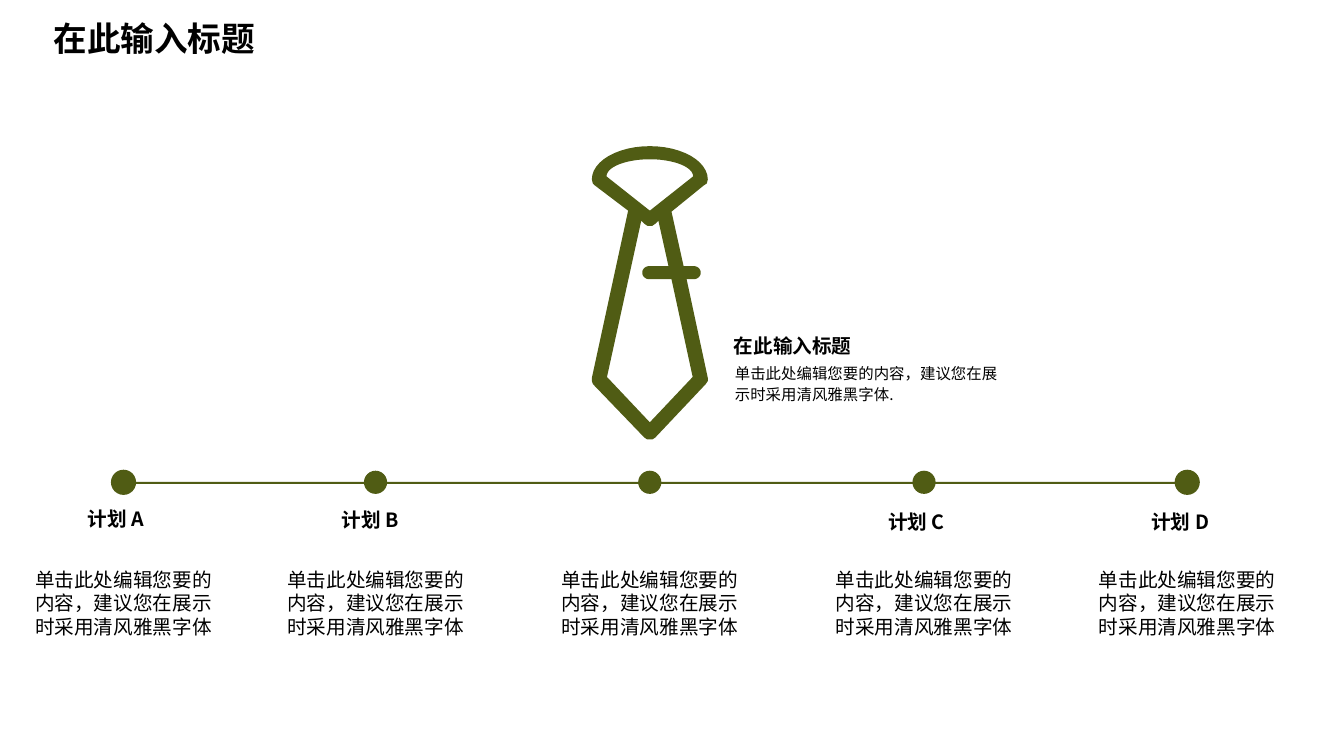
"""Build a timeline slide with a tie above five plan stops."""
from math import cos, pi, sin

from pptx import Presentation
from pptx.dml.color import RGBColor
from pptx.enum.shapes import MSO_SHAPE
from pptx.enum.text import MSO_ANCHOR, PP_ALIGN
from pptx.oxml.ns import qn
from pptx.util import Pt

PX = 9144
FONT = "Noto Sans CJK SC"
COLORS = {"olive": "505C14", "text": "000000"}
RECTANGLE, OVAL = MSO_SHAPE.RECTANGLE, MSO_SHAPE.OVAL
LEFT, CENTER = PP_ALIGN.LEFT, PP_ALIGN.CENTER
TOP = MSO_ANCHOR.TOP
BODY = "单击此处编辑您要的内容，建议您在展示时采用清风雅黑字体"
HEADING = "在此输入标题"
STOP_WIDTH = 205
STOPS = [
    (20, 25, "计划 A", 57, 31),
    (270, 23, "计划 B", 59, 32),
    (542, 23, None, 0, 0),
    (814, 23, "计划 C", 57, 34),
    (1075, 25, "计划 D", 57, 34),
]


def place(shape, left, top, width, height):
    """Move and size a shape, in px."""
    shape.left, shape.top = round(left * PX), round(top * PX)
    shape.width, shape.height = round(width * PX), round(height * PX)


def write(shape, text, size=14, bold=False, align=LEFT, spacing=1.0):
    """Put one formatted paragraph into a shape."""
    frame = shape.text_frame
    frame.word_wrap = True
    frame.vertical_anchor = TOP
    frame.margin_left = frame.margin_right = 10 * PX
    frame.margin_top = frame.margin_bottom = 5 * PX
    paragraph = frame.paragraphs[0]
    paragraph.alignment = align
    paragraph.line_spacing = spacing
    run = paragraph.add_run()
    run.text = text
    run.font.name = FONT
    run.font.size = Pt(size)
    run.font.bold = bold
    run.font.color.rgb = RGBColor.from_string(COLORS["text"])
    east_asian = run.font._element.makeelement(qn("a:ea"), {"typeface": FONT})
    run.font._element.append(east_asian)


def add_text(slide, box, text, **text_format):
    """Add a text box."""
    shape = slide.shapes.add_textbox(0, 0, 0, 0)
    place(shape, *box)
    write(shape, text, **text_format)


def paint(shape):
    """Fill a shape with olive, without line or shadow."""
    shape.shadow.inherit = False
    shape.fill.solid()
    shape.fill.fore_color.rgb = RGBColor.from_string(COLORS["olive"])
    shape.line.fill.background()


def add_preset(slide, kind, box):
    """Add a painted preset shape."""
    shape = slide.shapes.add_shape(kind, 0, 0, 0, 0)
    place(shape, *box)
    paint(shape)


def arc(center_x, center_y, radius_x, radius_y, start, end, steps=24):
    """Return points on an elliptic arc, with angles in half turns."""
    angles = [pi * (start + (end - start) * i / steps) for i in range(steps + 1)]
    return [(center_x + radius_x * cos(a), center_y + radius_y * sin(a)) for a in angles]


def add_tie(slide, left, top):
    """Draw the tie outline with its collar and body openings."""
    outline = [
        (115, 230), (94, 132), *arc(101, 125.5, 7, 6.5, 0.5, -0.5), (91, 119),
        (79, 65), (111, 39), (114, 37), *arc(57.5, 33, 57.5, 33, 0, -1),
        (1, 37), (3, 39), (36, 64), (0, 230), (0, 233), (1, 236), (52, 289),
        (55, 291), (60, 291), (63, 289), (113, 236), (115, 233),
    ]
    collar = [*arc(57.5, 30, 43, 17, -1, 0), (57.5, 64)]
    body = [
        (57.5, 274), (15, 229), (49, 74), (52, 77), (55, 79), (60, 79),
        (63, 77), (66, 74), (76, 119), *arc(57, 125.5, 7, 6.5, 1.5, 0.5),
        (79, 132), (100, 229),
    ]
    contours = [[((left + x) * PX, (top + y) * PX) for x, y in points]
                for points in (outline, collar, body)]
    builder = slide.shapes.build_freeform(*contours[0][0], scale=1.0)
    builder.add_line_segments(contours[0][1:])
    for points in contours[1:]:
        builder.move_to(*points[0])
        builder.add_line_segments(points[1:])
    paint(builder.convert_to_shape())


def add_caption(slide, left, top):
    """Add the heading and text beside the tie."""
    add_text(slide, (left + 1, top + 29, 295, 60), BODY + ".", size=11, spacing=1.1)
    add_text(slide, (left, top, 243, 34), HEADING, bold=True)


def add_stop(slide, left, top, diameter, label, label_left, label_top):
    """Add a dot, its label and its text below."""
    dot_left = left + (STOP_WIDTH - diameter) / 2
    add_preset(slide, OVAL, (dot_left, top + (23 - diameter) / 2, diameter, diameter))
    if label:
        add_text(slide, (left + label_left, top + label_top, 92, 34), label, bold=True)
    add_text(slide, (left, top + 91, STOP_WIDTH, 81), BODY, align=CENTER)


def add_timeline(slide, top):
    """Add the bar and its five stops."""
    add_preset(slide, RECTANGLE, (134, top + 11, 1032, 2))
    for left, *stop in STOPS:
        add_stop(slide, left, top, *stop)


def main():
    """Build and save the slide."""
    presentation = Presentation()
    presentation.slide_width, presentation.slide_height = 1333 * PX, 750 * PX
    slide = presentation.slides.add_slide(presentation.slide_layouts[5])
    place(slide.shapes.title, 43, 13, 261, 50)
    write(slide.shapes.title, HEADING, size=24, bold=True)
    add_timeline(slide, 467)
    add_tie(slide, 587, 145)
    add_caption(slide, 718, 326)
    presentation.save("out.pptx")


if __name__ == "__main__":
    main()
